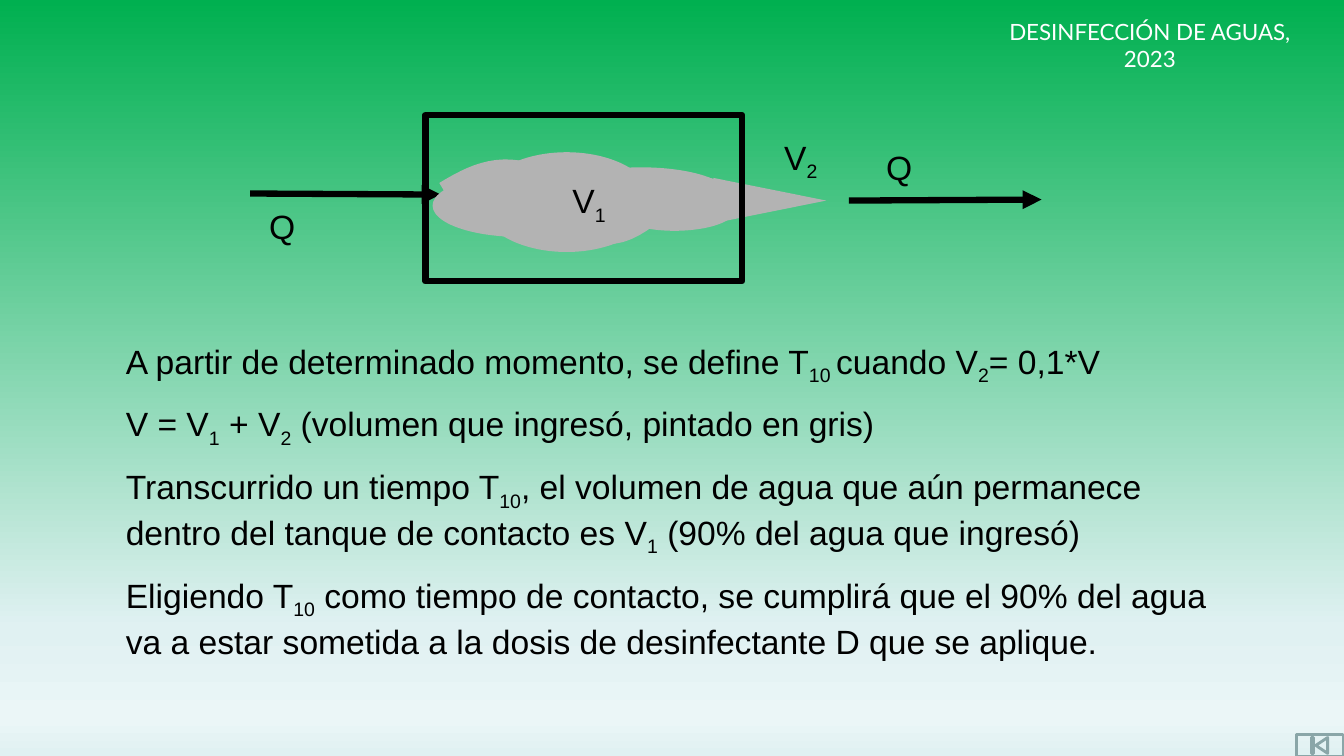
from lxml import etree
from pptx import Presentation
from pptx.dml.color import RGBColor
from pptx.enum.shapes import MSO_CONNECTOR, MSO_SHAPE
from pptx.enum.text import PP_ALIGN
from pptx.oxml.ns import qn
from pptx.util import Inches, Pt

STRAIGHT = MSO_CONNECTOR.STRAIGHT
RECTANGLE = MSO_SHAPE.RECTANGLE
OVAL = MSO_SHAPE.OVAL
TRIANGLE = MSO_SHAPE.ISOSCELES_TRIANGLE
BACK_BUTTON = MSO_SHAPE.ACTION_BUTTON_BEGINNING
CENTER = PP_ALIGN.CENTER

COLORS = {
    "black": "000000",
    "white": "FFFFFF",
    "plume": "B3B3B3",
    "button": "8AA6A8",
    "green": "00B050",
    "pale": "E0F1F2",
    "mist": "EBF6F7",
}
BACKGROUND_STOPS = [(0, "green"), (83, "pale"), (95, "mist"), (100, "pale")]

# Text between underscores is subscript
EXPLANATION = [
    "A partir de determinado momento, se define T_10 _cuando V_2_= 0,1*V",
    "V = V_1_ + V_2_ (volumen que ingresó, pintado en gris)",
    "Transcurrido un tiempo T_10_, el volumen de agua que aún permanece "
    "dentro del tanque de contacto es V_1_ (90% del agua que ingresó)",
    "Eligiendo T_10_ como tiempo de contacto, se cumplirá que el 90% del agua "
    "va a estar sometida a la dosis de desinfectante D que se aplique.",
]


def color(name):
    return RGBColor.from_string(COLORS[name])


def add_text(page, box, lines, size=24, font="Arial", ink="black", align=None, gap=0):
    frame = page.shapes.add_textbox(*map(Inches, box)).text_frame
    frame.word_wrap = True
    for index, line in enumerate(lines):
        para = frame.paragraphs[0] if index == 0 else frame.add_paragraph()
        para.alignment = align
        para.space_before = para.space_after = Pt(gap)
        para.font.size = Pt(size)
        para.font.name = font
        para.font.color.rgb = color(ink)
        for part, words in enumerate(line.split("_")):
            if words:
                span = para.add_run()
                span.text = words
                if part % 2:
                    span._r.get_or_add_rPr().set("baseline", "-25000")


def add_figure(page, kind, box, fill=None, line=None, width=0):
    figure = page.shapes.add_shape(kind, *map(Inches, box))
    figure.shadow.inherit = False
    style(figure, fill, line, width)
    return figure


def style(figure, fill, line, width):
    if fill:
        figure.fill.solid()
        figure.fill.fore_color.rgb = color(fill)
    else:
        figure.fill.background()
    if line:
        figure.line.color.rgb = color(line)
        figure.line.width = Pt(width)
    else:
        figure.line.fill.background()


def add_arrow(page, start, end):
    arrow = page.shapes.add_connector(STRAIGHT, *map(Inches, start + end))
    arrow.line.color.rgb = color("black")
    arrow.line.width = Pt(4.5)
    etree.SubElement(arrow.line._get_or_add_ln(), qn("a:tailEnd"), type="triangle")
    etree.SubElement(arrow._element.spPr, qn("a:effectLst"))


def bezier(start, first, second, end, steps=12):
    for step in range(1, steps + 1):
        t = step / steps
        weights = ((1 - t) ** 3, 3 * t * (1 - t) ** 2, 3 * t * t * (1 - t), t ** 3)
        yield tuple(
            Inches(sum(w * v for w, v in zip(weights, values)))
            for values in zip(start, first, second, end)
        )


def add_wave(page, left, top):
    """Thick wavy stroke; knots and handles are offsets from the corner."""
    knots = [(0, 0.2), (0.2, 0.08), (0.41, -0.04), (0.67, 0), (0.93, 0.05),
             (1.3, 0.45), (1.56, 0.47), (1.82, 0.49), (2.03, 0.19), (2.22, 0.15),
             (2.41, 0.1), (2.7, 0.22), (2.7, 0.22)]
    points = [(left + x, top + y) for x, y in knots]
    builder = page.shapes.build_freeform(*map(Inches, points[0]))
    for index in range(0, len(points) - 1, 3):
        builder.add_line_segments(bezier(*points[index:index + 4]), close=False)
    wave = builder.convert_to_shape()
    wave.shadow.inherit = False
    style(wave, None, "plume", 26)


def paint_background(page):
    fill = page.background.fill
    fill.gradient()
    fill.gradient_angle = 270
    stops = page.background._cSld.find(".//" + qn("a:gsLst"))
    for stop in list(stops):
        stops.remove(stop)
    for percent, name in BACKGROUND_STOPS:
        stop = etree.SubElement(stops, qn("a:gs"), pos=str(percent * 1000))
        etree.SubElement(stop, qn("a:srgbClr"), val=COLORS[name])


def add_frame(page, width, height):
    # Course title and navigation button
    add_text(page, (width - 3.51, 0.13, 3.17, 0.37), ["DESINFECCIÓN DE AGUAS, 2023"],
             size=16, font="Lato", ink="white", align=CENTER)
    add_figure(page, BACK_BUTTON, (width - 0.47, height - 0.21, 0.46, 0.21),
               line="button", width=2)


def add_tank(page, left, top, width, height):
    # Inflow
    add_arrow(page, (left - 1.74, top + 0.78), (left + 0.15, top + 0.79))

    # Grey plume, with its tip beyond the outlet
    add_wave(page, left + 0.23, top + 0.63)
    tip = add_figure(page, TRIANGLE, (left + 3.19, top + 0.29, 0.45, 1.12), fill="plume")
    tip.rotation = 90
    for x, y, w, h in [(1.27, 0.52, 1.74, 0.55), (1.87, 0.74, 1.2, 0.41),
                       (0.07, 0.59, 1.72, 0.62), (0.54, 0.37, 1.72, 0.99)]:
        add_figure(page, OVAL, (left + x, top + y, w, h), fill="plume")

    # Tank wall and outflow
    add_figure(page, RECTANGLE, (left, top, width, height), line="black", width=4.5)
    add_arrow(page, (left + width + 1.06, top + 0.85), (left + width + 2.97, top + 0.84))

    # Labels
    for label, x, y in [("Q", -1.65, 0.85), ("Q", 4.47, 0.27),
                        ("V_2_", 3.46, 0.17), ("V_1_", 1.36, 0.6)]:
        add_text(page, (left + x, top + y, 0.73, 0.5), [label])


def main():
    deck = Presentation()
    deck.slide_width, deck.slide_height = Inches(13.33), Inches(7.5)
    page = deck.slides.add_slide(deck.slide_layouts[6])
    paint_background(page)
    add_frame(page, 13.33, 7.5)
    add_tank(page, 4.22, 1.14, 3.14, 1.65)
    add_text(page, (1.15, 3.33, 11.1, 3.03), EXPLANATION, gap=6)
    deck.save("out.pptx")


if __name__ == "__main__":
    main()
